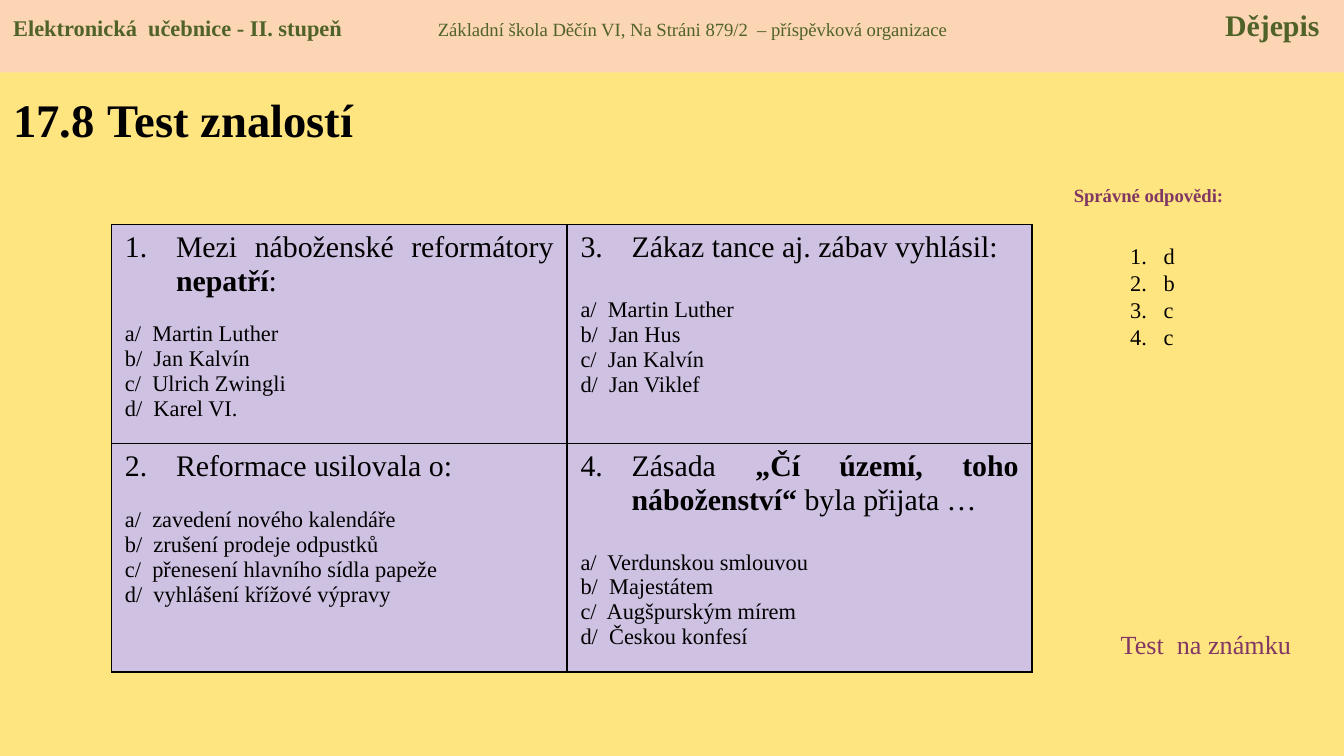
from lxml.etree import SubElement
from pptx import Presentation
from pptx.dml.color import RGBColor
from pptx.enum.shapes import MSO_SHAPE
from pptx.enum.text import MSO_ANCHOR, PP_ALIGN
from pptx.oxml.ns import qn
from pptx.util import Inches, Pt

WIDE = 10
HIGH = WIDE * 9 / 16
FONT = "Times New Roman"
BACK, BAND, CELL = "FFE580", "FCD5B5", "CEC1E2"
INK, GREEN, PLUM = "000000", "4F6228", "813763"

HEAD = [("Elektronická  učebnice - II. stupeň", 12, True),
        ("\tZákladní škola Děčín VI, Na Stráni 879/2  – příspěvková organizace", 10, False),
        ("\tDějepis", 16, True)]
TABS = [(3.16, "l"), (9.72, "r")]
TITLE = [("17.8", 25, True), (" ", 28, True), ("Test znalostí", 25, True)]

# Each quiz: question runs (text, bold), gap below it in points, choices
QUIZ = [
    ([("Mezi náboženské reformátory ", False), ("nepatří", True), (":", False)], 13,
     ["Martin Luther", "Jan Kalvín", "Ulrich Zwingli", "Karel VI."]),
    ([("Reformace usilovala o:", False)], 13,
     ["zavedení nového kalendáře", "zrušení prodeje odpustků",
      "přenesení hlavního sídla papeže", "vyhlášení křížové výpravy"]),
    ([("Zákaz tance aj. zábav vyhlásil:", False)], 18,
     ["Martin Luther", "Jan Hus", "Jan Kalvín", "Jan Viklef"]),
    ([("Zásada ", False), ("„Čí území, toho náboženství“ ", True),
      ("byla přijata …", False)], 18,
     ["Verdunskou smlouvou", "Majestátem", "Augšpurským mírem", "Českou konfesí"]),
]
KEYS = ["d", "b", "c", "c"]
COLS, ROWS = [3.39, 3.46], [1.63, 1.7]


def paint(fill, color):
    fill.solid()
    fill.fore_color.rgb = RGBColor.from_string(color)


def write(para, runs, color=INK, **style):
    """Fill a paragraph with (text, size, bold) runs."""
    for key, value in style.items():
        setattr(para, key, value)
    for text, size, bold in runs:
        run = para.add_run()
        run.text = text
        look = {"name": FONT, "size": Pt(size), "bold": bold}
        for key, value in look.items():
            setattr(run.font, key, value)
        run.font.color.rgb = RGBColor.from_string(color)


def number(para, start, indent):
    """Give a paragraph an automatic number and a hanging indent."""
    props = para._p.get_or_add_pPr()
    props.set("marL", str(Inches(indent)))
    props.set("indent", str(-Inches(indent)))
    SubElement(props, qn("a:buFont"), typeface="+mj-lt")
    SubElement(props, qn("a:buAutoNum"), type="arabicPeriod", startAt=str(start))


def box(slide, *place):
    frame = slide.shapes.add_textbox(*map(Inches, place)).text_frame
    frame.word_wrap = True
    return frame


def edge(cell):
    """Draw a black one-point border; lines come before the fill."""
    props = cell._tc.get_or_add_tcPr()
    for spot, side in enumerate(("lnL", "lnR", "lnT", "lnB")):
        line = SubElement(props, qn("a:" + side), w=str(Pt(1)))
        fill = SubElement(line, qn("a:solidFill"))
        SubElement(fill, qn("a:srgbClr"), val=INK)
        props.insert(spot, line)


def ask(cell, num, quiz):
    runs, gap, picks = quiz
    paint(cell.fill, CELL)
    edge(cell)
    frame = cell.text_frame
    para = frame.paragraphs[0]
    write(para, [(text, 16, bold) for text, bold in runs],
          alignment=PP_ALIGN.JUSTIFY, space_after=Pt(gap))
    number(para, num, 0.38)
    for mark, pick in zip("abcd", picks):
        write(frame.add_paragraph(), [(f"{mark}/  {pick}", 12, False)],
              alignment=PP_ALIGN.JUSTIFY)


def main():
    deck = Presentation()
    deck.slide_width, deck.slide_height = Inches(WIDE), Inches(HIGH)
    slide = deck.slides.add_slide(deck.slide_layouts[6])
    paint(slide.background.fill, BACK)

    title = box(slide, 0, 0.54, 3.19, 0.65)
    title.vertical_anchor = MSO_ANCHOR.MIDDLE
    write(title.paragraphs[0], TITLE)

    label = box(slide, 7.76, 1.32, 1.57, 0.27)
    write(label.paragraphs[0], [("Správné odpovědi:", 10, True)], PLUM,
          alignment=PP_ALIGN.CENTER)

    table = slide.shapes.add_table(
        2, 2, *map(Inches, (0.83, 1.67, sum(COLS), sum(ROWS)))).table
    table.first_row = table.horz_banding = False
    for col, width in zip(table.columns, COLS):
        col.width = Inches(width)
    for row, height in zip(table.rows, ROWS):
        row.height = Inches(height)
    for spot, quiz in enumerate(QUIZ):
        ask(table.cell(spot % 2, spot // 2), spot + 1, quiz)

    keys = box(slide, 8.31, 1.55, 0.55, 1.31)
    keys.margin_top = Inches(0.25)
    for spot, key in enumerate(KEYS):
        para = keys.add_paragraph() if spot else keys.paragraphs[0]
        write(para, [(key, 12, False)], line_spacing=Pt(14.5))
        number(para, 1, 0.25)

    grade = box(slide, 8.24, 4.63, 1.57, 0.34)
    write(grade.paragraphs[0], [("Test  na známku", 14, False)], PLUM)

    band = slide.shapes.add_shape(
        MSO_SHAPE.RECTANGLE, 0, 0, Inches(WIDE), Inches(0.54))
    band.shadow.inherit = False
    paint(band.fill, BAND)
    band.line.fill.background()
    band.text_frame.vertical_anchor = MSO_ANCHOR.TOP
    para = band.text_frame.paragraphs[0]
    write(para, HEAD, GREEN, alignment=PP_ALIGN.LEFT)
    stops = SubElement(para._p.get_or_add_pPr(), qn("a:tabLst"))
    for place, side in TABS:
        SubElement(stops, qn("a:tab"), pos=str(Inches(place)), algn=side)

    deck.save("out.pptx")


if __name__ == "__main__":
    main()
